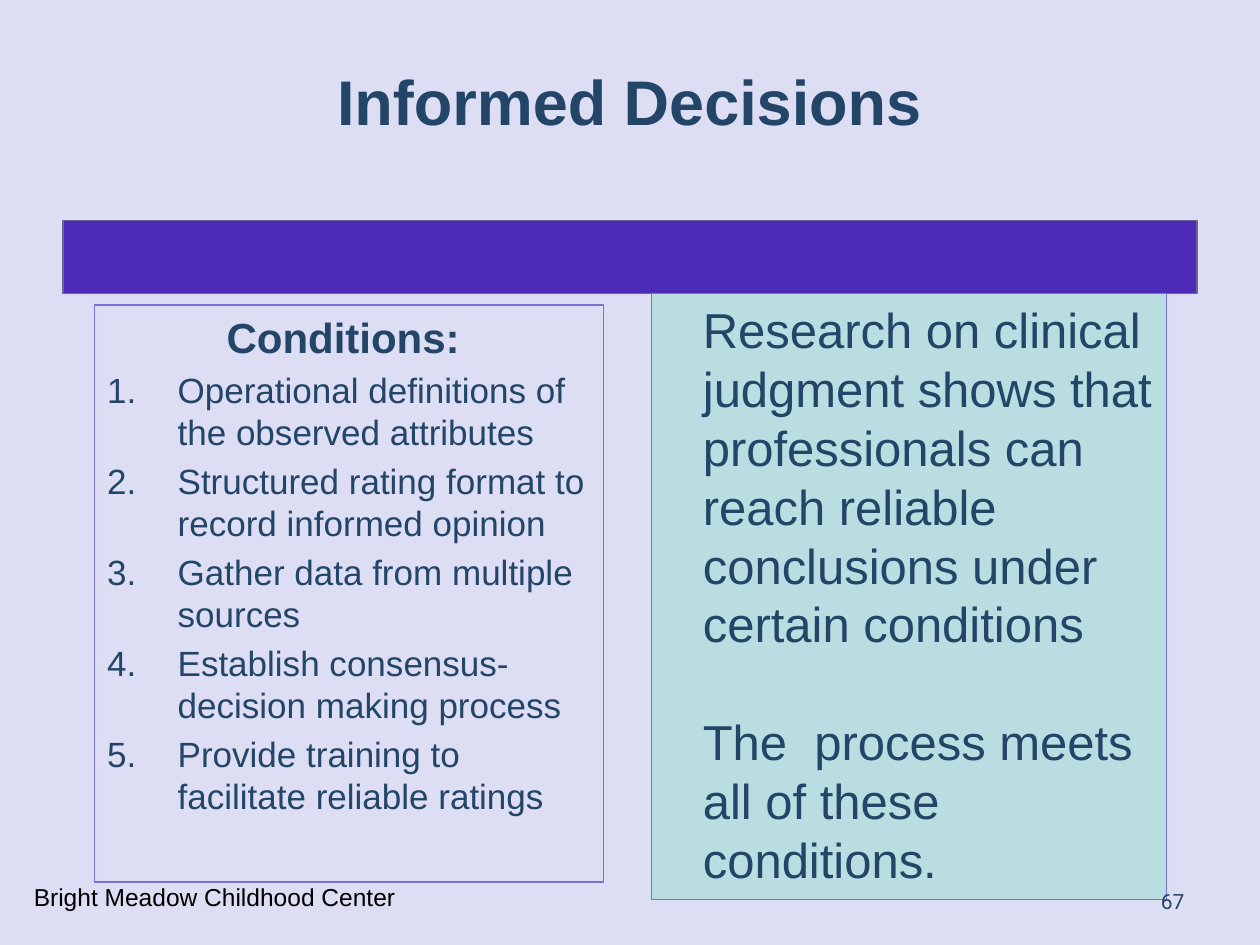
from lxml import etree
from pptx import Presentation
from pptx.dml.color import RGBColor
from pptx.enum.shapes import MSO_SHAPE
from pptx.enum.text import MSO_ANCHOR, MSO_AUTO_SIZE, PP_ALIGN
from pptx.oxml.ns import qn
from pptx.util import Inches, Pt

INK, EDGE = "224568", "7575D1"
CONDITIONS = [
    "Operational definitions of the observed attributes",
    "Structured rating format to record informed opinion",
    "Gather data from multiple sources",
    "Establish consensus-decision making process",
    "Provide training to facilitate reliable ratings",
]
FINDINGS = [
    "Research on clinical judgment shows that professionals can reach "
    "reliable conclusions under certain conditions",
    "The  process meets all of these conditions.",
]


def rgb(value):
    return RGBColor.from_string(value)


def place(shape, box):
    shape.left, shape.top, shape.width, shape.height = map(Inches, box)


def paint(shape, fill, line):
    if fill:
        shape.fill.solid()
        shape.fill.fore_color.rgb = rgb(fill)
    shape.line.color.rgb = rgb(line)
    shape.line.width = Pt(0.75)


def write(paragraph, text, size, color=INK, font="Arial", bold=False,
          align=PP_ALIGN.LEFT):
    paragraph.alignment = align
    run = paragraph.add_run()
    run.text = text
    run.font.size, run.font.name, run.font.bold = Pt(size), font, bold
    run.font.color.rgb = rgb(color)


def indent(paragraph, left, first=0, numbered=False):
    props = paragraph._p.get_or_add_pPr()
    props.set("marL", str(Inches(left)))
    props.set("indent", str(Inches(first)))
    if numbered:
        etree.SubElement(props, qn("a:buFont"), typeface="+mj-lt")
        etree.SubElement(props, qn("a:buAutoNum"), type="arabicPeriod")
    else:
        etree.SubElement(props, qn("a:buNone"))


def add_paragraphs(frame, count):
    return [frame.paragraphs[0]] + [frame.add_paragraph() for _ in range(count - 1)]


def add_rectangle(slide, box, fill, line):
    rectangle = slide.shapes.add_shape(MSO_SHAPE.RECTANGLE, *map(Inches, box))
    rectangle.shadow.inherit = False
    paint(rectangle, fill, line)
    return rectangle


def fill_title(title, box):
    place(title, box)
    frame = title.text_frame
    frame.auto_size = MSO_AUTO_SIZE.NONE
    frame.vertical_anchor = MSO_ANCHOR.MIDDLE
    write(frame.paragraphs[0], "Informed Decisions", 36, bold=True,
          align=PP_ALIGN.CENTER)


def fill_conditions(body, box):
    place(body, box)
    paint(body, None, EDGE)
    frame = body.text_frame
    frame.auto_size = MSO_AUTO_SIZE.NONE
    heading, *items = add_paragraphs(frame, len(CONDITIONS) + 1)
    heading.space_before = Pt(4.8)
    indent(heading, 0.56, -0.56)
    write(heading, "Conditions: ", 24, bold=True, align=PP_ALIGN.CENTER)
    for item, condition in zip(items, CONDITIONS):
        item.space_before = Pt(4)
        indent(item, 0.56, -0.56, numbered=True)
        write(item, condition, 20)


def add_findings(slide, box):
    frame = add_rectangle(slide, box, "BADDE1", EDGE).text_frame
    frame.word_wrap = True
    frame.vertical_anchor = MSO_ANCHOR.TOP
    paragraphs = add_paragraphs(frame, len(FINDINGS))
    paragraphs[1].space_before = Pt(33.5)  # one line of 28 pt text
    for paragraph, finding in zip(paragraphs, FINDINGS):
        indent(paragraph, 0.31)
        write(paragraph, finding, 28)


def add_label(slide, box, text, size, anchor=MSO_ANCHOR.TOP, **style):
    frame = slide.shapes.add_textbox(*map(Inches, box)).text_frame
    frame.word_wrap = True
    frame.vertical_anchor = anchor
    write(frame.paragraphs[0], text, size, **style)


def main():
    prs = Presentation()
    prs.slide_width, prs.slide_height = Inches(10), Inches(7.5)
    slide = prs.slides.add_slide(prs.slide_layouts[1])
    slide.background.fill.solid()
    slide.background.fill.fore_color.rgb = rgb("DDDDF3")

    # Title and the band below it
    fill_title(slide.shapes.title, (0.58, 0.17, 8.83, 1.25))
    add_rectangle(slide, (0.5, 1.75, 9, 0.58), "4E2AB8", "666699")

    # Two panels
    fill_conditions(slide.placeholders[1], (0.75, 2.42, 4.04, 4.58))
    add_findings(slide, (5.17, 2.33, 4.09, 4.81))

    # Footer and page number
    add_label(slide, (0.17, 6.95, 3.17, 0.4), "Bright Meadow Childhood Center",
              14, color="000000")
    add_label(slide, (7.17, 6.95, 2.33, 0.4), "67", 12, MSO_ANCHOR.MIDDLE,
              font="Roboto", align=PP_ALIGN.RIGHT)

    prs.save("out.pptx")


if __name__ == "__main__":
    main()
